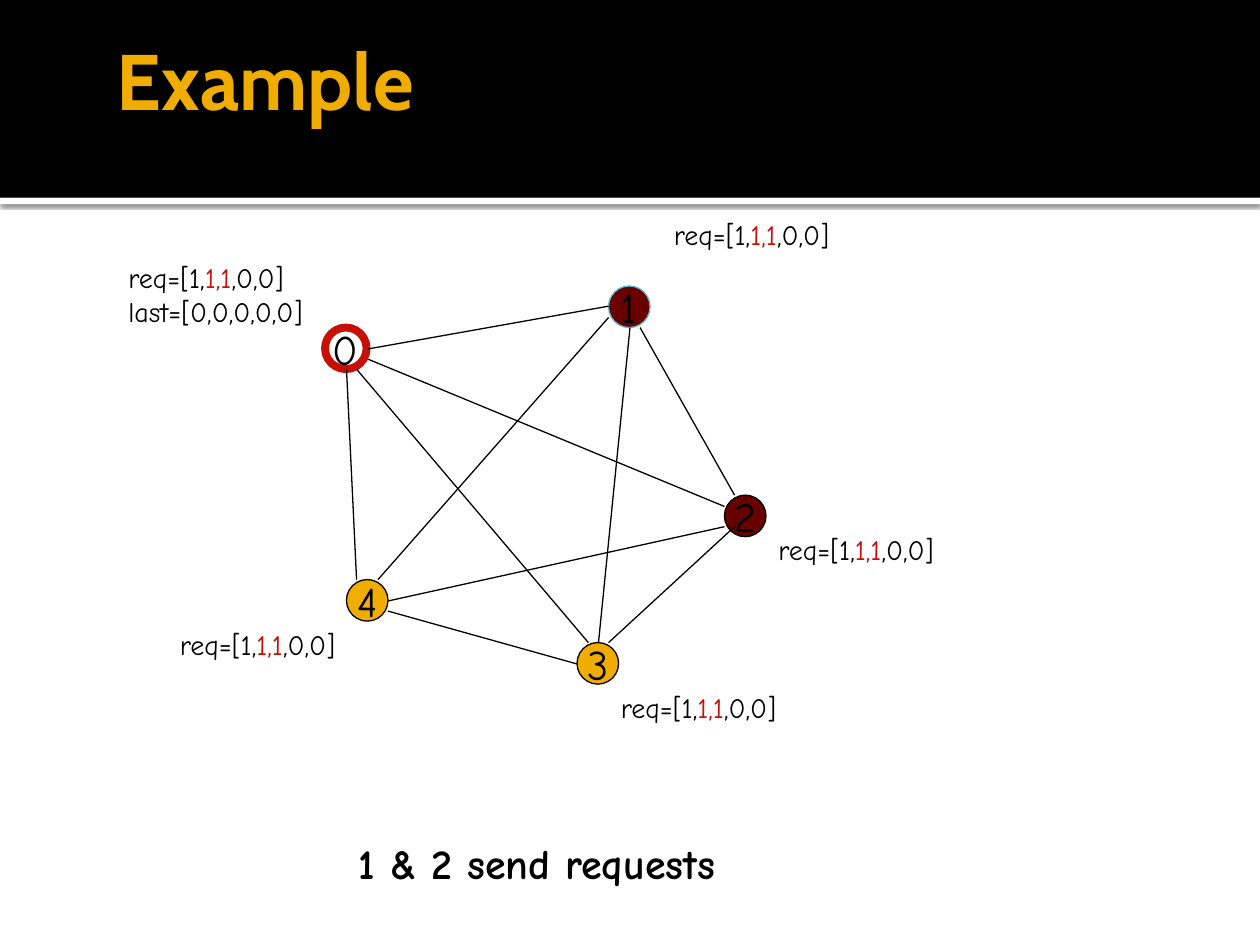
"""Build a slide of five linked nodes where two nodes send requests."""
from lxml.etree import SubElement as Sub
from pptx import Presentation
from pptx.dml.color import RGBColor as RGB
from pptx.enum.shapes import MSO_CONNECTOR as Link, MSO_SHAPE as Shape
from pptx.enum.text import MSO_ANCHOR as Anchor, MSO_AUTO_SIZE as Auto, PP_ALIGN as Align
from pptx.oxml.ns import qn
from pptx.util import Inches, Pt

BLACK = RGB(0, 0, 0)
WHITE = RGB(255, 255, 255)
GOLD = RGB(0xF0, 0xAD, 0x00)
RED = RGB(0xC7, 0x0F, 0x05)
MAROON = RGB(0x68, 0x00, 0x00)
TEAL = RGB(0x60, 0xB5, 0xCC)
HAND = "Comic Neue"
SIZE = 0.33

REQ = [("req=[1,", BLACK), ("1,1", RED), (",0,0]", BLACK)]
LAST = [("last=[0,0,0,0,0]", BLACK)]

NODES = [
    ("0", 2.58, 2.6, None, RED, 4.5),
    ("2", 5.75, 3.93, MAROON, BLACK, 0.75),
    ("1", 4.83, 2.27, MAROON, TEAL, 0.75),
    ("3", 4.58, 5.1, GOLD, BLACK, 0.75),
    ("4", 2.75, 4.6, GOLD, BLACK, 0.75),
]
EDGES = [
    (2.92, 2.77, 4.83, 2.43),
    (5.08, 2.6, 5.83, 3.93),
    (5.83, 4.18, 4.83, 5.1),
    (4.58, 5.27, 3.08, 4.85),
    (2.83, 4.6, 2.75, 2.93),
    (2.92, 2.85, 5.75, 4.02),
    (2.83, 2.93, 4.67, 5.1),
    (5, 2.6, 4.75, 5.1),
    (4.83, 2.52, 3, 4.6),
    (5.75, 4.18, 3.08, 4.77),
]
LABELS = [
    (0.92, 2.02, 1.79, 0.72, [REQ, LAST]),
    (5.25, 1.68, 1.64, 0.41, [REQ]),
    (6.08, 4.18, 1.64, 0.41, [REQ]),
    (4.83, 5.43, 1.64, 0.41, [REQ]),
    (1.33, 4.93, 1.64, 0.41, [REQ]),
]


def write(frame, rows, size=16, font=HAND, bold=False, align=Align.LEFT,
          anchor=Anchor.TOP, wrap=False, auto=Auto.NONE):
    """Fill a text frame with rows of (text, color) runs."""
    frame.word_wrap = wrap
    frame.auto_size = auto
    frame.vertical_anchor = anchor
    for i, row in enumerate(rows):
        para = frame.add_paragraph() if i else frame.paragraphs[0]
        para.alignment = align
        for text, color in row:
            run = para.add_run()
            run.text = text
            run.font.size = Pt(size)
            run.font.name = font
            run.font.bold = bold
            run.font.color.rgb = color


def draw(kind, box, fill=None, line=None, width=0.75):
    """Add a preset shape with the given fill and outline."""
    shape = slide.shapes.add_shape(kind, *map(Inches, box))
    shape.shadow.inherit = False
    if fill is None:
        shape.fill.background()
    else:
        shape.fill.solid()
        shape.fill.fore_color.rgb = fill
    if line is None:
        shape.line.fill.background()
    else:
        shape.line.color.rgb = line
        shape.line.width = Pt(width)
    return shape


def label(box, rows, **style):
    """Add a text box and return its frame."""
    frame = slide.shapes.add_textbox(*map(Inches, box)).text_frame
    write(frame, rows, **style)
    return frame


def shade(shape):
    """Give a shape a soft shadow below it."""
    glow = Sub(shape._element.spPr.find(qn("a:effectLst")), qn("a:outerShdw"),
               blurRad=str(Pt(2.5)), dist=str(Pt(0.8)), dir="5400000",
               algn="tl", rotWithShape="0")
    tint = Sub(glow, qn("a:srgbClr"), val=str(BLACK))
    Sub(tint, qn("a:alpha"), val="60000")


def join(x1, y1, x2, y2):
    """Draw a thin black line between two points."""
    line = slide.shapes.add_connector(Link.STRAIGHT, *map(Inches, (x1, y1, x2, y2)))
    line.line.color.rgb = BLACK
    line.line.width = Pt(0.75)
    Sub(line._element.spPr, qn("a:effectLst"))


deck = Presentation()
deck.slide_width, deck.slide_height = Inches(10), Inches(7.5)
slide = deck.slides.add_slide(deck.slide_layouts[6])

shade(draw(Shape.RECTANGLE, (0, 1.57, 10, 0.05), WHITE))
draw(Shape.RECTANGLE, (0, 0, 10, 1.57), BLACK)
title = label((0.83, 0, 8.5, 1.25), [[("Example", GOLD)]], size=45,
              font="Cabin", bold=True, anchor=Anchor.MIDDLE, wrap=True)
title.margin_right = Inches(0.05)

for name, x, y, fill, line, width in NODES:
    node = draw(Shape.OVAL, (x, y, SIZE, SIZE), fill, line, width)
    write(node.text_frame, [[(name, BLACK)]], size=24, align=Align.CENTER,
          anchor=Anchor.MIDDLE)
for edge in EDGES:
    join(*edge)
for *box, rows in LABELS:
    label(box, rows, auto=Auto.SHAPE_TO_FIT_TEXT)
label((2.75, 6.6, 4.42, 0.57), [[("1 & 2 send requests", BLACK)]], size=24,
      bold=True, wrap=True, auto=Auto.SHAPE_TO_FIT_TEXT)

deck.save("out.pptx")
